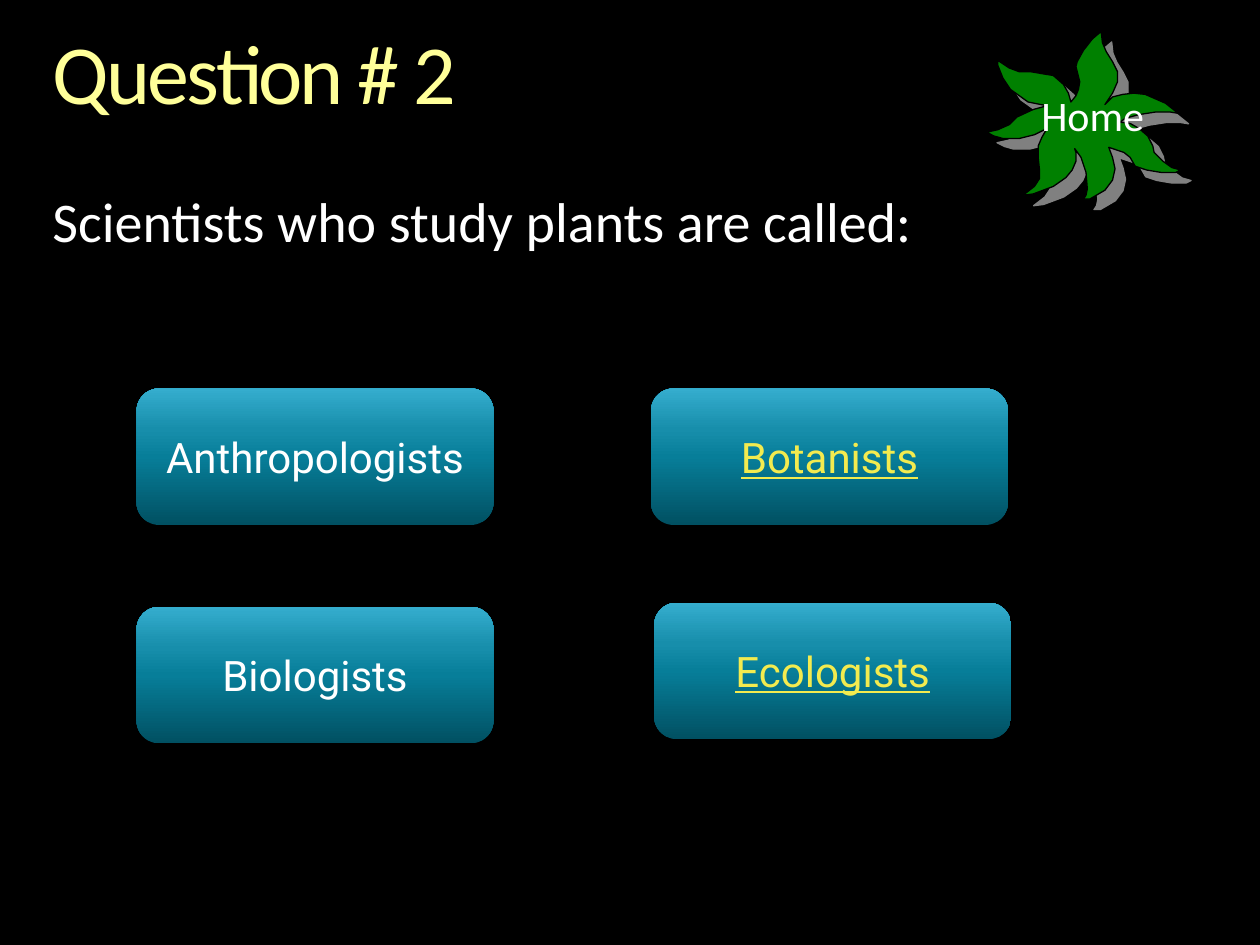
from lxml.etree import SubElement as Sub
from pptx import Presentation
from pptx.dml.color import RGBColor as RGB
from pptx.enum.shapes import MSO_SHAPE as Kind
from pptx.enum.text import MSO_ANCHOR as Anchor, PP_ALIGN as Align
from pptx.oxml.ns import qn
from pptx.util import Inches, Pt

HUE = {"back": "000000", "title": "FFFF99", "text": "FFFFFF", "link": "F3EB4F",
       "leaf": "008000", "shade": "808080"}
BLUES = {0: "015062", 50: "077E99", 70: "178EAB", 100: "35ADCE"}

# The slide is a grid of 120 columns by 90 rows.
deck = Presentation()
deck.slide_width, deck.slide_height = Inches(10), Inches(7.5)
CELL = deck.slide_width // 120


def write(shape, text, size, face, hue, inset=True):
    frame = shape.text_frame
    frame.text = text
    frame.word_wrap = True
    if not inset:
        frame.margin_left = frame.margin_right = 0
        frame.margin_top = frame.margin_bottom = 0
        frame.vertical_anchor = Anchor.TOP
        frame.paragraphs[0].line_spacing = 0.9
    font = frame.paragraphs[0].runs[0].font
    font.size, font.name = Pt(size), face
    font.color.rgb = RGB.from_string(HUE[hue])
    return frame.paragraphs[0]


def cast(shape, hue, alpha, blur, dist, angle):
    """Give the shape an outer shadow; blur and dist are in points."""
    shape.shadow.inherit = False
    glow = Sub(shape._element.spPr.find(qn("a:effectLst")), qn("a:outerShdw"),
               blurRad=str(Pt(blur)), dist=str(Pt(dist)), dir=str(angle * 60000),
               algn="ctr", rotWithShape="0")
    tint = Sub(glow, qn("a:srgbClr"), val=HUE[hue])
    Sub(tint, qn("a:alpha"), val=str(alpha * 1000))


slide = deck.slides.add_slide(deck.slide_layouts[5])
slide.background.fill.solid()
slide.background.fill.fore_color.rgb = RGB.from_string(HUE["back"])
shapes = slide.shapes

title = shapes.title
title.left, title.top = 5 * CELL, 3 * CELL
title.width, title.height = 110 * CELL, int(8.8 * CELL)
head = write(title, "Question # 2", 48, "Calibri", "title", inset=False)
head.alignment = Align.LEFT
head.runs[0].font._element.set("spc", "-150")

ask = shapes.add_textbox(5 * CELL, int(18.5 * CELL), 110 * CELL, int(5.8 * CELL))
write(ask, "Scientists who study plants are called:", 32, "Calibri", "text", inset=False)

# Answer buttons: text, column, row, colour
answers = [("Biologists", 13, 57.8, "text"), ("Ecologists", 62.3, 57.4, "link"),
           ("Botanists", 62, 37, "link"), ("Anthropologists", 13, 37, "text")]
for text, col, row, hue in answers:
    key = shapes.add_shape(Kind.ROUNDED_RECTANGLE, int(col * CELL), int(row * CELL),
                           34 * CELL, 13 * CELL)
    key.fill.gradient()
    key.fill.gradient_angle = 90
    stops = key._element.spPr.find(qn("a:gradFill")).find(qn("a:gsLst"))
    for stop in list(stops):
        stops.remove(stop)
    for pos, blue in BLUES.items():
        Sub(Sub(stops, qn("a:gs"), pos=str(pos * 1000)), qn("a:srgbClr"), val=blue)
    key.line.fill.background()
    cast(key, "back", 45, 5, 3, 90)
    key.text_frame.vertical_anchor = Anchor.MIDDLE
    line = write(key, text, 24, "Roboto", hue)
    line.alignment = Align.CENTER
    if hue == "link":
        line.runs[0].font.underline = True

# Leaf outline, one petal a row, in hundredths of an inch
LEAF = [
    (850, 81), (848, 74), (844, 67), (836, 60), (830, 59), (818, 57), (809, 57),
    (801, 54), (792, 48), (792, 52), (796, 62), (802, 71), (809, 76), (816, 81), (831, 84),
    (820, 87), (807, 93), (801, 99), (792, 103), (783, 105), (789, 108), (796, 110),
    (809, 110), (821, 107), (831, 102),
    (827, 109), (824, 116), (824, 125), (825, 134), (825, 142), (821, 148), (812, 155),
    (820, 154), (836, 148), (846, 141), (851, 135), (854, 128), (854, 121), (853, 118),
    (858, 125), (862, 137), (863, 150), (862, 155), (860, 158), (865, 158), (877, 151),
    (883, 143), (885, 134), (883, 125), (880, 117),
    (886, 119), (892, 121), (897, 125), (901, 132), (910, 135), (922, 137), (933, 137),
    (937, 135), (930, 133), (923, 128), (916, 121), (915, 116), (911, 108), (904, 102),
    (897, 98), (889, 97),
    (893, 94), (904, 91), (917, 89), (929, 89), (935, 90), (925, 82), (909, 75),
    (900, 74), (891, 75), (883, 77), (877, 83),
    (883, 74), (887, 65), (887, 57), (883, 49), (878, 41), (875, 34), (874, 25),
    (867, 31), (860, 40), (855, 49), (854, 53), (857, 65), (856, 71), (854, 76)]
pen = shapes.build_freeform(*LEAF[0], scale=Inches(0.01))
pen.add_line_segments(LEAF[1:], close=True)
leaf = pen.convert_to_shape()
leaf.fill.solid()
leaf.fill.fore_color.rgb = RGB.from_string(HUE["leaf"])
leaf.line.color.rgb = RGB.from_string(HUE["back"])
leaf.line.width = Pt(0.75)
cast(leaf, "shade", 100, 0, 8.5, 45)

home = shapes.add_textbox(98 * CELL, int(7.9 * CELL), 13 * CELL, 6 * CELL)
write(home, "Home", 24, "Calibri", "text")

deck.save("out.pptx")
